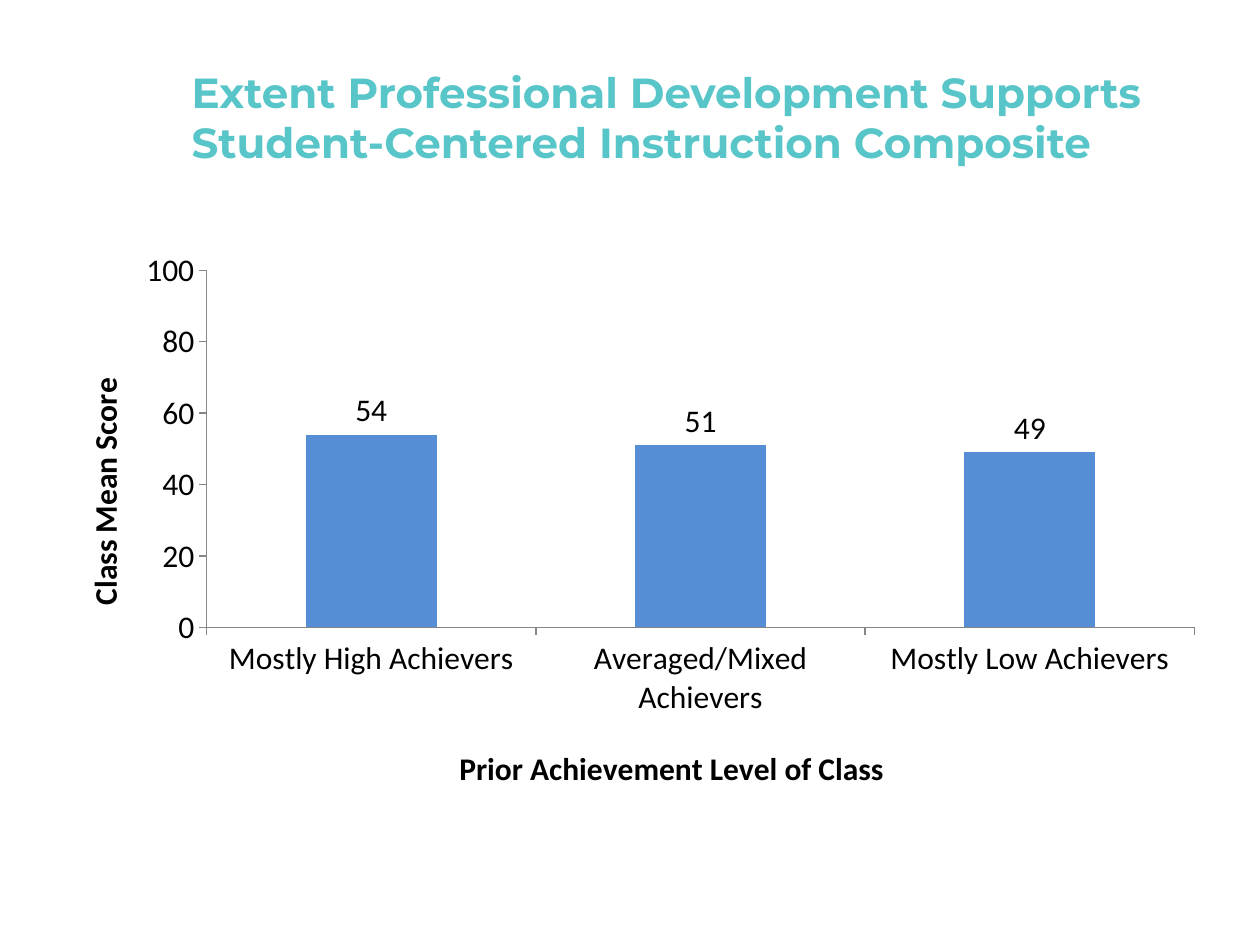
from lxml.etree import SubElement
from pptx import Presentation
from pptx.chart.data import CategoryChartData
from pptx.dml.color import RGBColor
from pptx.enum.chart import XL_CHART_TYPE, XL_LABEL_POSITION, XL_TICK_MARK
from pptx.enum.text import MSO_ANCHOR, MSO_AUTO_SIZE, PP_ALIGN
from pptx.oxml.ns import qn
from pptx.util import Inches, Pt

COLORS = {"title": "58C5C9", "bar": "558ED5", "text": "000000", "axis": "868686"}
FONTS = {"title": "Montserrat", "chart": "Calibri"}


class SlideBuilder:
    def __init__(self, deck):
        self.deck = deck
        self.page = deck.slides.add_slide(deck.slide_layouts[5])

    def frame(self, left, top, width, height):
        """Turn shares of the slide's size into lengths."""
        across, down = self.deck.slide_width, self.deck.slide_height
        return [int(share * size) for share, size in
                zip((left, top, width, height), (across, down, across, down))]

    def style(self, font, name, size, color, bold=False):
        font.name, font.size, font.bold = name, Pt(size), bold
        font.color.rgb = RGBColor.from_string(COLORS[color])

    def title(self, text, place):
        box = self.page.shapes.title
        box.left, box.top, box.width, box.height = self.frame(*place)
        text_frame = box.text_frame
        text_frame.word_wrap = True
        text_frame.auto_size = MSO_AUTO_SIZE.NONE
        text_frame.vertical_anchor = MSO_ANCHOR.MIDDLE
        para = text_frame.paragraphs[0]
        para.alignment = PP_ALIGN.LEFT
        span = para.add_run()
        span.text = text
        self.style(span.font, FONTS["title"], 24, "title", bold=True)

    def place_part(self, part, **shares):
        """Fix a chart part at shares (x, y, w, h) of the chart's size."""
        for old in part.findall(qn("c:layout")):
            part.remove(old)
        layout = SubElement(part, qn("c:layout"))
        text = part.find(qn("c:tx"))
        part.insert(0 if text is None else part.index(text) + 1, layout)
        manual = SubElement(layout, qn("c:manualLayout"))
        if "w" in shares:
            SubElement(manual, qn("c:layoutTarget")).set("val", "inner")
        for key in ("x", "y"):
            SubElement(manual, qn(f"c:{key}Mode")).set("val", "edge")
        for key, share in shares.items():
            SubElement(manual, qn(f"c:{key}")).set("val", str(share))

    def axis(self, axis, title, x, y):
        axis.has_major_gridlines = False
        axis.major_tick_mark = XL_TICK_MARK.OUTSIDE
        axis.minor_tick_mark = XL_TICK_MARK.NONE
        axis.format.line.color.rgb = RGBColor.from_string(COLORS["axis"])
        axis.format.line.width = Pt(0.75)
        span = axis.axis_title.text_frame.paragraphs[0].add_run()
        span.text = title
        self.style(span.font, FONTS["chart"], 18, "text", bold=True)
        self.place_part(axis.axis_title._element, x=x, y=y)

    def column_chart(self, scores, place):
        data = CategoryChartData()
        data.categories = list(scores)
        data.add_series("Series 1", list(scores.values()))
        chart = self.page.shapes.add_chart(
            XL_CHART_TYPE.COLUMN_CLUSTERED, *self.frame(*place), data).chart
        chart.has_title = chart.has_legend = False
        self.style(chart.font, FONTS["chart"], 18, "text")

        plot = chart.plots[0]
        plot.gap_width = 151
        plot.vary_by_categories = False
        fill = plot.series[0].format.fill
        fill.solid()
        fill.fore_color.rgb = RGBColor.from_string(COLORS["bar"])
        plot.has_data_labels = True
        plot.data_labels.show_value = True
        plot.data_labels.position = XL_LABEL_POSITION.OUTSIDE_END

        scale = chart.value_axis
        scale.minimum_scale, scale.maximum_scale, scale.major_unit = 0, 100, 20
        self.axis(scale, "Class Mean Score", x=0.03, y=0.23)
        self.axis(chart.category_axis, "Prior Achievement Level of Class", x=0.35, y=0.88)
        plot_area = chart._chartSpace.chart.plotArea
        self.place_part(plot_area, x=0.14, y=0.05, w=0.84, h=0.63)


def main():
    deck = Presentation()
    deck.slide_width, deck.slide_height = Inches(10), Inches(7.5)
    builder = SlideBuilder(deck)
    builder.title("Extent Professional Development Supports "
                  "Student-Centered Instruction Composite",
                  (0.142, 0.04, 0.808, 1 / 6))
    scores = {"Mostly High Achievers": 54,
              "Averaged/Mixed Achievers": 51,
              "Mostly Low Achievers": 49}
    builder.column_chart(scores, (1 / 30, 0.256, 14 / 15, 0.6))
    deck.save("out.pptx")


if __name__ == "__main__":
    main()
